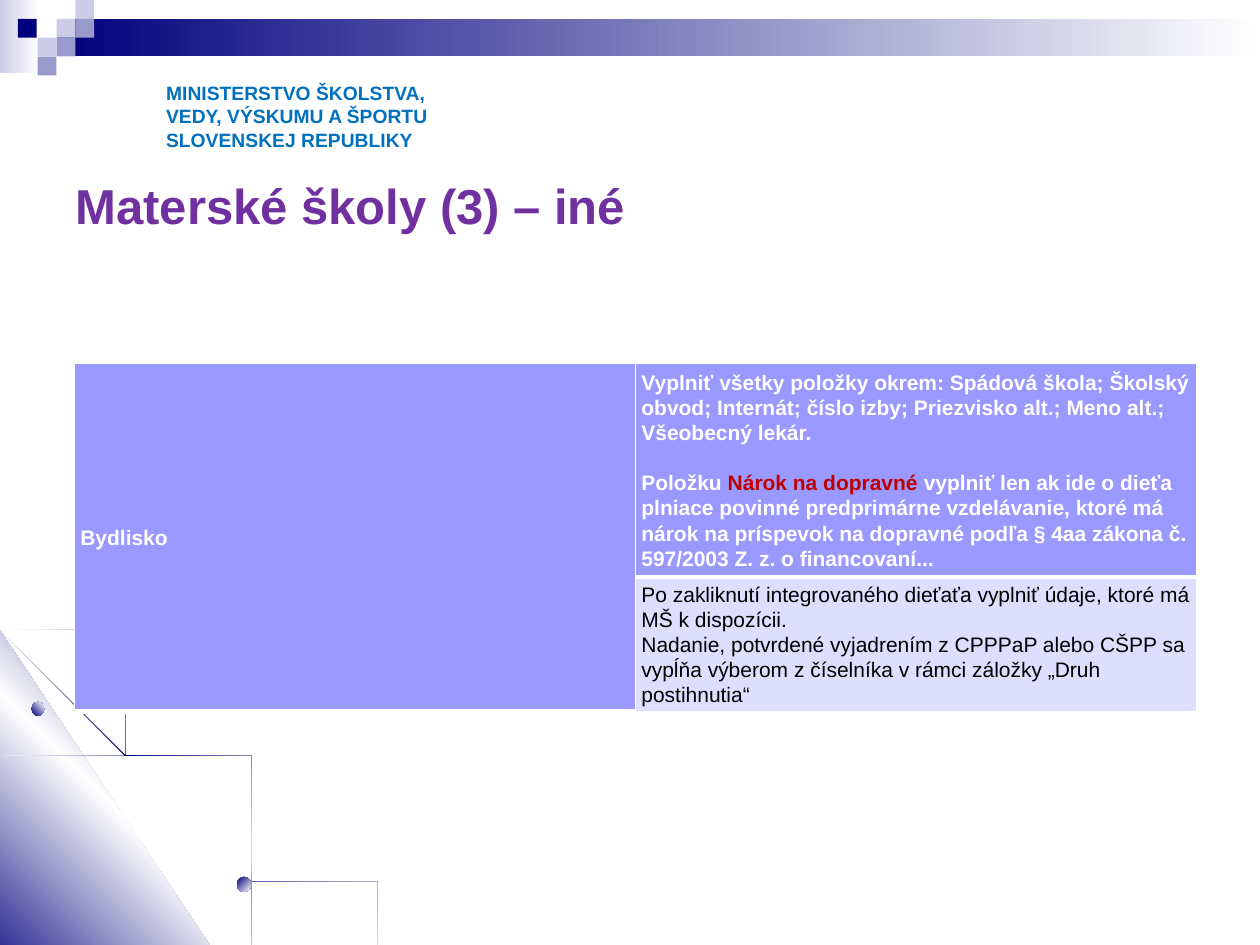
"""Build the slide on kindergartens with its ministry heading, orbit artwork and table."""
from pptx import Presentation
from pptx.dml.color import RGBColor
from pptx.enum.shapes import MSO_SHAPE as Preset
from pptx.enum.text import MSO_ANCHOR as Anchor, PP_ALIGN as Align
from pptx.oxml import parse_xml
from pptx.oxml.ns import nsdecls
from pptx.util import Cm, Pt


def color(value):
    """Turn a hex string into a colour."""
    return RGBColor.from_string(value)


def paint(shape, colors, angle=0):
    """Fill a shape with one colour or an even gradient, without line or shadow."""
    shape.shadow.inherit = False
    shape.line.fill.background()
    if len(colors) == 1:
        shape.fill.solid()
        shape.fill.fore_color.rgb = color(colors[0])
        return
    step = 100000 // (len(colors) - 1)
    stops = "".join(
        f'<a:gs pos="{i * step}"><a:srgbClr val="{value}"/></a:gs>' for i, value in enumerate(colors)
    )
    shape._element.spPr.insert(2, parse_xml(
        f'<a:gradFill {nsdecls("a")} rotWithShape="1"><a:gsLst>{stops}</a:gsLst>'
        f'<a:lin ang="{angle * 60000}" scaled="0"/></a:gradFill>'
    ))


NAVY, PALE, MID, WHITE = "00007D", "CCCCE6", "9999CC", "FFFFFF"
PERIWINKLE, LAVENDER, RED, BLACK = "9999FF", "DEDEFF", "C00000", "000000"

deck = Presentation()
deck.slide_width, deck.slide_height = Cm(25.4), Cm(19.05)
page = deck.slides.add_slide(deck.slide_layouts[5])
shapes = page.shapes

bands = [(0, 0, 0.79, 1.47, [PALE, WHITE]), (1.14, 0.38, 24.26, 0.76, [NAVY, WHITE])]
squares = [
    (1.14, 0.38, PALE), (1.52, 0, PALE), (1.52, 0.38, MID), (0.76, 0.76, PALE),
    (0.36, 0.38, NAVY), (1.14, 0.76, MID), (0.76, 1.14, MID),
]
for left, top, width, height, colors in bands + [(x, y, 0.38, 0.38, [c]) for x, y, c in squares]:
    band = shapes.add_shape(Preset.RECTANGLE, Cm(left), Cm(top), Cm(width), Cm(height))
    paint(band, colors)

outer_orbit = [
    (0.4, 5.31), (0.2, 5.26), (0, 5.23), (0, 5.24), (0.2, 5.28), (0.4, 5.32), (0.68, 5.42),
    (0.95, 5.53), (1.22, 5.69), (1.47, 5.86), (1.7, 6.05), (1.91, 6.27), (2.1, 6.51),
    (2.28, 6.77), (2.38, 6.95), (2.47, 7.13), (2.54, 7.31), (2.61, 7.5), (2.62, 7.5),
    (2.56, 7.31), (2.48, 7.13), (2.39, 6.95), (2.29, 6.77), (2.12, 6.5), (1.92, 6.26),
    (1.7, 6.04), (1.48, 5.84), (1.23, 5.67), (0.96, 5.53), (0.69, 5.4),
]
corner = [(2.27, 7.5), (0, 7.5), (0, 5.16)]
inner_orbit = [
    (2.01, 7.24), (2.07, 7.37), (2.12, 7.5), (2.14, 7.5), (2.09, 7.36), (2.02, 7.23),
    (1.88, 6.97), (1.71, 6.71), (1.51, 6.46), (1.3, 6.24), (1.07, 6.05), (0.82, 5.88),
    (0.56, 5.73), (0.29, 5.61), (0, 5.51), (0, 5.53), (0.27, 5.62), (0.55, 5.74),
    (0.81, 5.9), (1.06, 6.06), (1.29, 6.26), (1.5, 6.48), (1.7, 6.72), (1.87, 6.98),
]
middle_orbit = [
    (0, 5.27), (0, 5.29), (0.26, 5.38), (0.52, 5.51), (0.77, 5.65), (1, 5.83), (1.22, 6.02),
    (1.43, 6.23), (1.6, 6.46), (1.78, 6.71), (1.88, 6.9), (1.98, 7.1), (2.06, 7.3),
    (2.12, 7.49), (2.14, 7.49), (2.07, 7.29), (1.99, 7.09), (1.89, 6.89), (1.79, 6.7),
    (1.62, 6.44), (1.44, 6.22), (1.23, 6), (1.01, 5.81), (0.79, 5.64), (0.54, 5.5), (0.27, 5.37),
]
glow = [WHITE, NAVY, WHITE]
for points, colors, angle in [
    (outer_orbit, glow, 45), (corner, [NAVY, WHITE, NAVY], 315),
    (inner_orbit, glow, 45), (middle_orbit, glow, 45),
]:
    builder = shapes.build_freeform(*points[0], scale=Cm(2.54))
    builder.add_line_segments(points[1:], close=True)
    paint(builder.convert_to_shape(), colors, angle)

for left, top, width, height, angle in [
    (0.64, 14.15, 0.25, 0.28, 315), (4.78, 17.68, 0.28, 0.3, 45), (2.46, 13.97, 0.38, 0.38, 315),
]:
    planet = shapes.add_shape(Preset.OVAL, Cm(left), Cm(top), Cm(width), Cm(height))
    paint(planet, [NAVY, WHITE], angle)

ministry = shapes.add_textbox(Cm(3.1), Cm(1.52), Cm(6.2), Cm(1.68))
ministry.text_frame.word_wrap = True
ministry.text_frame.text = "MINISTERSTVO ŠKOLSTVA,\nVEDY, VÝSKUMU A ŠPORTU\nSLOVENSKEJ REPUBLIKY"

title = shapes.title
title.left, title.top, title.width, title.height = Cm(1.27), Cm(3.33), Cm(22.86), Cm(1.6)
title.text_frame.text = "Materské školy (3) – iné"
title.text_frame.vertical_anchor = Anchor.MIDDLE

for box, size, ink in [(ministry, 11, "0070C0"), (title, 28, "7030A0")]:
    for para in box.text_frame.paragraphs:
        para.alignment = Align.LEFT
        for span in para.runs:
            span.font.name, span.font.size, span.font.bold = "Arial", Pt(size), True
            span.font.color.rgb = color(ink)

residence = [[("Bydlisko", WHITE)]]
residence_rules = [
    [("Vyplniť všetky položky okrem: Spádová škola; Školský obvod; Internát; číslo izby; "
      "Priezvisko alt.; Meno alt.; Všeobecný lekár.", WHITE)],
    [("Položku ", WHITE), ("Nárok na dopravné ", RED),
     ("vyplniť len ak ide o dieťa plniace povinné predprimárne vzdelávanie, ktoré má nárok na "
      "príspevok na dopravné podľa § 4aa zákona č. 597/2003 Z. z. o financovaní...", WHITE)],
]
integration_rules = [
    [("Po zakliknutí integrovaného dieťaťa vyplniť údaje, ktoré má MŠ k dispozícii.", BLACK)],
    [("Nadanie, potvrdené vyjadrením z CPPPaP alebo CŠPP sa vypĺňa výberom z číselníka v rámci "
      "záložky „Druh postihnutia“", BLACK)],
]
table = shapes.add_table(2, 2, Cm(1.5), Cm(7.32), Cm(22.62), Cm(6.56)).table
for row, height in zip(table.rows, (4.06, 2.5)):
    row.height = Cm(height)
table.cell(0, 0).merge(table.cell(1, 0))

for row, col, fill, gap, paragraphs in [
    (0, 0, PERIWINKLE, 0, residence), (0, 1, PERIWINKLE, 14.4, residence_rules),
    (1, 0, PERIWINKLE, 0, []), (1, 1, LAVENDER, 0, integration_rules),
]:
    cell = table.cell(row, col)
    cell.vertical_anchor = Anchor.MIDDLE
    cell.margin_left = cell.margin_right = Cm(0.12)
    cell.margin_top = cell.margin_bottom = Cm(0)
    cell.fill.solid()
    cell.fill.fore_color.rgb = color(fill)
    bottom = 1 if (row, col) == (1, 1) else 3
    for index, (side, width) in enumerate(zip("LRTB", (1, 1, 1, bottom))):
        cell._tc.get_or_add_tcPr().insert(index, parse_xml(
            f'<a:ln{side} {nsdecls("a")} w="{Pt(width)}"><a:solidFill>'
            f'<a:srgbClr val="{WHITE}"/></a:solidFill></a:ln{side}>'
        ))
    for index, pieces in enumerate(paragraphs):
        para = cell.text_frame.add_paragraph() if index else cell.text_frame.paragraphs[0]
        para.line_spacing = 1.07
        if index:
            para.space_before = Pt(gap)
        for words, ink in pieces:
            span = para.add_run()
            span.text = words
            span.font.name, span.font.size, span.font.bold = "Arial", Pt(12), row == 0
            span.font.color.rgb = color(ink)

deck.save("out.pptx")
